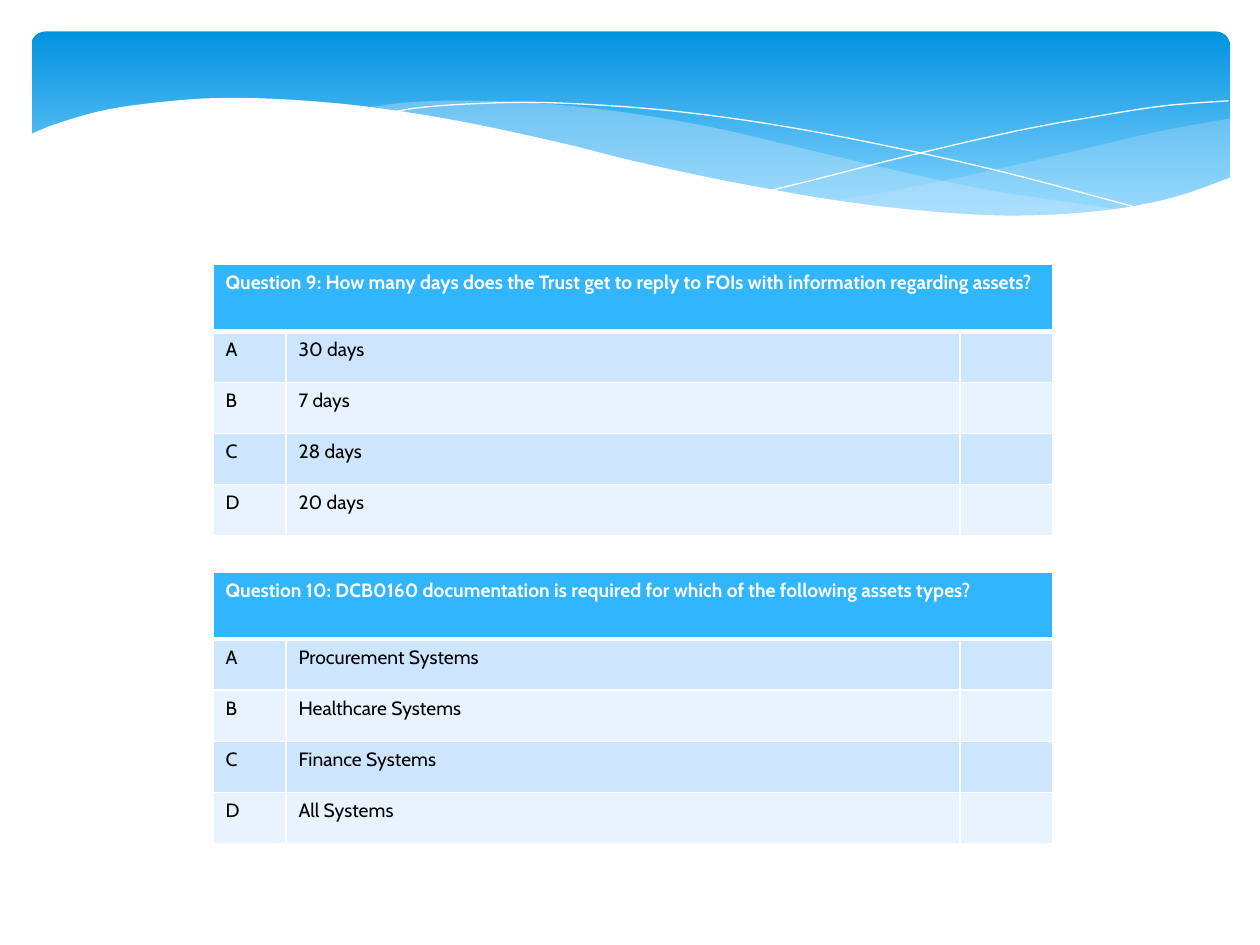
from pptx import Presentation, util as u
from pptx.dml.color import RGBColor
from pptx.enum import shapes
from pptx.oxml import parse_xml
from pptx.oxml.ns import nsdecls, qn
from lxml import etree

QUIZ = [
    ("Question 9: How many days does the Trust get to reply to FOIs with information regarding assets?",
     ["30 days", "7 days", "28 days", "20 days"]),
    ("Question 10: DCB0160 documentation is required for which of the following assets types?",
     ["Procurement Systems", "Healthcare Systems", "Finance Systems", "All Systems"]),
]
LEFT, TOPS = 121.7, (151.2, 327)
COLS, ROWS = (41.7, 385.3, 52.7), (38.2, 29.2, 29.2, 29.2, 29.2)
HEAD, BANDS = "31B6FD", ("CEE5FE", "E8F3FF")
WAVES = [
    {"fill": "C6E7FC", "alpha": 29, "curves": [
        [(703, 67.7), (663, 75), (620, 85), (561, 98.6), (508, 109.4), (476, 115)],
        [(476, 115), (518, 120), (554, 123), (586, 124), (621, 122.4), (652, 117.4),
         (678, 111), (703, 101.5)]]},
    {"fill": "C6E7FC", "alpha": 40, "curves": [
        [(643, 120.2), (603, 114.5), (558, 107.3), (508, 96.5), (453, 83.5), (410, 73.4),
         (361, 64.8), (318, 59.8), (274, 57.6), (236, 58.3), (206, 62)],
        [(206, 62), (246, 67.7), (291, 76.3), (323, 83.5), (382, 97.2), (433, 108),
         (479, 116), (520, 121), (565, 124), (596, 124.6), (643, 120.2)]]},
    {"line": "FFFFFF", "curves": [
        [(222.5, 64.8), (236, 62), (261, 59.8), (299.5, 58.5), (338, 59.8), (384, 63.4),
         (438, 70.6), (500, 82), (572, 98), (653, 119.5)]]},
    {"line": "FFFFFF", "curves": [
        [(441, 108.7), (470, 101.5), (518, 89.3), (580, 75), (623.5, 67), (665, 60.5),
         (702, 57.6)]]},
    {"fill": "FFFFFF", "alpha": 100, "curves": [
        [(703.5, 101.3), (670, 113), (630, 120.4), (582.5, 123.2), (536, 121.2), (481, 115),
         (417, 103.8), (362, 92), (322, 82), (263, 69.3), (210, 61), (166, 57), (127, 56),
         (95, 58), (61, 62.7), (33, 70.5), (16.5, 77.2)],
        [(16.5, 161), (703.5, 161)]]},
]


def tint(code):
    return RGBColor.from_string(code)


def smooth(knots, steps=6):
    ends = [knots[0], *knots, knots[-1]]
    out = [knots[0]]
    for a, b, c, d in zip(ends, ends[1:], ends[2:], ends[3:]):
        for i in range(1, steps + 1):
            t = i / steps
            out.append(tuple(
                (2 * q + (r - p) * t + (2 * p - 5 * q + 4 * r - s) * t ** 2
                 + (3 * q - p - 3 * r + s) * t ** 3) / 2
                for p, q, r, s in zip(a, b, c, d)))
    return out


def draw_sky(slide):
    sky = slide.shapes.add_shape(shapes.MSO_SHAPE.ROUNDED_RECTANGLE,
                                 u.Pt(18), u.Pt(18), u.Pt(684.7), u.Pt(112.3))
    sky.adjustments[0] = 0.07
    sky.shadow.inherit = False
    sky.line.fill.background()
    sky.fill.gradient()
    sky.fill.gradient_angle = 270
    for stop, (pos, code) in zip(sky.fill.gradient_stops, [(0, "0293E0"), (0.9, "83D3FE")]):
        stop.position = pos
        stop.color.rgb = tint(code)


def draw_wave(slide, wave):
    dots = [(u.Pt(x), u.Pt(y)) for curve in wave["curves"] for x, y in smooth(curve)]
    pen = slide.shapes.build_freeform(*dots[0])
    pen.add_line_segments(dots[1:], close="fill" in wave)
    shape = pen.convert_to_shape()
    shape.shadow.inherit = False
    if "fill" in wave:
        shape.line.fill.background()
        shape.fill.solid()
        shape.fill.fore_color.rgb = tint(wave["fill"])
        color = shape.fill._xPr.find(".//" + qn("a:srgbClr"))
        etree.SubElement(color, qn("a:alpha"), val=str(wave["alpha"] * 1000))
    else:
        shape.fill.background()
        shape.line.color.rgb = tint(wave["line"])
        shape.line.width = u.Pt(0)


def style_cell(cell, words, fill, edges, font):
    props = cell._tc.get_or_add_tcPr()
    for side, width in edges.items():
        props.append(parse_xml(
            f'<a:ln{side} {nsdecls("a")} w="{u.Pt(width)}"><a:solidFill>'
            f'<a:srgbClr val="FFFFFF"/></a:solidFill></a:ln{side}>'))
    cell.fill.solid()
    cell.fill.fore_color.rgb = tint(fill)
    if words:
        run = cell.text_frame.paragraphs[0].add_run()
        run.text = words
        run.font.color.rgb = tint("FFFFFF" if font["bold"] else "000000")
        for name, value in font.items():
            setattr(run.font, name, value)


def draw_quiz(slide, top, ask, picks):
    grid = slide.shapes.add_table(len(ROWS), len(COLS), u.Pt(LEFT), u.Pt(top),
                                  u.Pt(sum(COLS)), u.Pt(sum(ROWS))).table
    for col, width in zip(grid.columns, COLS):
        col.width = u.Pt(width)
    for row, height in zip(grid.rows, ROWS):
        row.height = u.Pt(height)
    grid.cell(0, 0).merge(grid.cell(0, 2))
    lines = [(ask, "", "")] + [(key, pick, "") for key, pick in zip("ABCD", picks)]
    for r, line in enumerate(lines):
        fill = BANDS[(r - 1) % 2] if r else HEAD
        edges = {"L": 1, "R": 1, "T": 3 if r == 1 else 1, "B": 1 if r else 3}
        font = {"name": "Cabin", "size": u.Pt(11), "bold": r == 0}
        for c, words in enumerate(line):
            style_cell(grid.cell(r, c), words, fill, edges, font)


def main():
    """Build the quiz slide with a wave banner and two question tables."""
    deck = Presentation()
    deck.slide_width, deck.slide_height = u.Pt(720), u.Pt(540)
    slide = deck.slides.add_slide(deck.slide_layouts[6])
    draw_sky(slide)
    for wave in WAVES:
        draw_wave(slide, wave)
    for top, (ask, picks) in zip(TOPS, QUIZ):
        draw_quiz(slide, top, ask, picks)
    deck.save("out.pptx")


if __name__ == "__main__":
    main()
